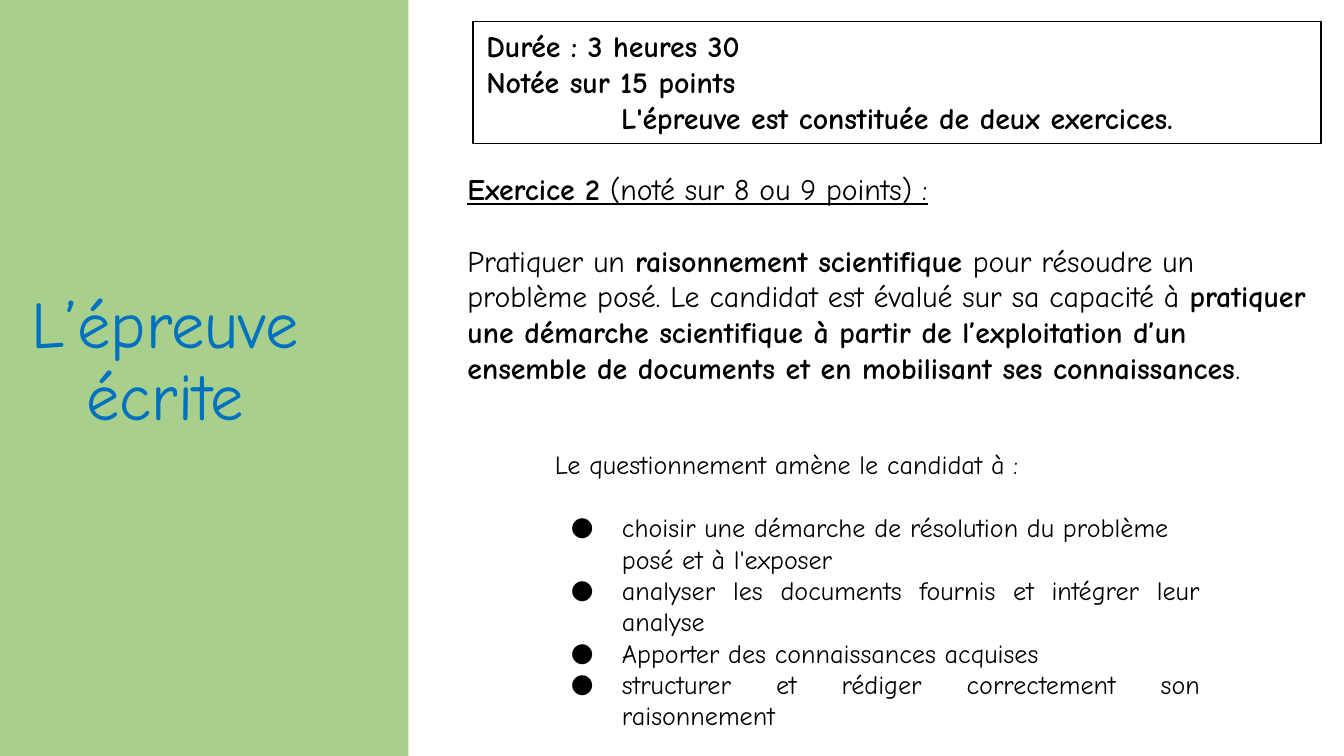
"""Build the slide on the written exam, exercise 2."""
from dataclasses import dataclass

from lxml.etree import SubElement
from pptx import Presentation
from pptx.dml.color import RGBColor
from pptx.enum.shapes import MSO_SHAPE as Shape
from pptx.enum.text import MSO_ANCHOR as Anchor, PP_ALIGN as Align
from pptx.oxml.ns import qn
from pptx.util import Inches, Pt

HUES = {"black": "000000", "green": "A8D08C", "blue": "0070C0"}
FONT = "Comic Neue"
WIDE = 10
HIGH = WIDE * 9 / 16


@dataclass
class Run:
    text: str
    bold: bool = False


@dataclass
class Para:
    runs: list[Run]
    size: float = 16
    hue: str = "black"
    align: Align = Align.LEFT
    line: bool = False
    after: float = 0
    pitch: float = 1.0
    bullet: bool = False


@dataclass
class Box:
    left: float
    top: float
    width: float
    height: float
    paras: list[Para]
    anchor: Anchor = Anchor.TOP
    fill: str = ""
    edge: str = ""


def color(name: str) -> RGBColor:
    """Return the named colour."""
    return RGBColor.from_string(HUES[name])


def mark(para, size: float) -> None:
    """Give a paragraph a hanging round bullet."""
    props = para._p.get_or_add_pPr()
    props.set("marL", str(Inches(0.5)))
    props.set("indent", str(-Inches(0.38)))
    tint = SubElement(props, qn("a:buClr"))
    SubElement(tint, qn("a:srgbClr"), val=HUES["black"])
    SubElement(props, qn("a:buSzPts"), val=str(int(size * 100)))
    SubElement(props, qn("a:buFont"), typeface=FONT)
    SubElement(props, qn("a:buChar"), char="●")


def write(para, data: Para) -> None:
    """Fill one paragraph with its runs and format."""
    para.alignment = data.align
    para.line_spacing = data.pitch
    para.space_after = Pt(data.after)
    if data.bullet:
        mark(para, data.size)
    font = para.font
    font.name, font.size, font.underline = FONT, Pt(data.size), data.line
    font.color.rgb = color(data.hue)
    for item in data.runs:
        run = para.add_run()
        run.text = item.text
        run.font.bold = item.bold


def draw(slide, box: Box) -> None:
    """Draw one box with its fill, edge and text."""
    area = [Inches(n) for n in (box.left, box.top, box.width, box.height)]
    if box.fill or box.edge:
        shape = slide.shapes.add_shape(Shape.RECTANGLE, *area)
        shape.shadow.inherit = False
        if box.fill:
            shape.fill.solid()
            shape.fill.fore_color.rgb = color(box.fill)
        else:
            shape.fill.background()
        if box.edge:
            shape.line.color.rgb = color(box.edge)
            shape.line.width = Pt(0.75)
        else:
            shape.line.fill.background()
    else:
        shape = slide.shapes.add_textbox(*area)
    frame = shape.text_frame
    frame.word_wrap = True
    frame.vertical_anchor = box.anchor
    for i, data in enumerate(box.paras):
        write(frame.add_paragraph() if i else frame.paragraphs[0], data)


TASK = [
    Para([Run("Exercice 2", True), Run(" (noté sur 8 ou 9 points) :")],
         line=True, after=19.2),
    Para([
        Run("Pratiquer un "),
        Run("raisonnement scientifique ", True),
        Run("pour résoudre un problème posé. Le candidat est évalué "
            "sur sa capacité à "),
        Run("pratiquer une démarche scientifique à partir de l’exploitation "
            "d’un ensemble de documents et en mobilisant ses connaissances",
            True),
        Run("."),
    ]),
]
TERMS = [
    Para([Run("Durée : 3 heures 30", True)]),
    Para([Run("Notée sur 15 points", True)]),
    Para([Run("L'épreuve est constituée de deux exercices.", True)],
         align=Align.CENTER),
]
TITLE = [Para([Run("L’épreuve\vécrite")], 35.6, "blue", Align.CENTER,
              pitch=0.9)]
TITLE = [Para([Run(word)], 35.6, "blue", Align.CENTER, pitch=0.9)
         for word in ("L’épreuve", "écrite")]
STEPS = [
    ("choisir une démarche de résolution du problème posé et à l'exposer",
     Align.LEFT),
    ("analyser les documents fournis et intégrer leur analyse",
     Align.JUSTIFY),
    ("Apporter des connaissances acquises", Align.JUSTIFY),
    ("structurer et rédiger correctement son raisonnement", Align.JUSTIFY),
]
GOALS = [
    Para([Run("Le questionnement amène le candidat à :")], 14, after=16.8),
    *(Para([Run(text)], 14, align=side, bullet=True) for text, side in STEPS),
]
BOXES = [
    Box(3.38, 1.22, 6.48, 2.76, TASK),
    Box(3.52, 0.16, 6.31, 0.91, TERMS, edge="black"),
    Box(0, 0, 3.04, HIGH, [], fill="green"),
    Box(0, 2.1, 2.46, 1.2, TITLE, Anchor.MIDDLE),
    Box(4.03, 3.29, 5, 2.22, GOALS),
]


def main() -> None:
    """Build and save the deck."""
    deck = Presentation()
    deck.slide_width, deck.slide_height = Inches(WIDE), Inches(HIGH)
    slide = deck.slides.add_slide(deck.slide_layouts[6])
    for box in BOXES:
        draw(slide, box)
    deck.save("out.pptx")


if __name__ == "__main__":
    main()
